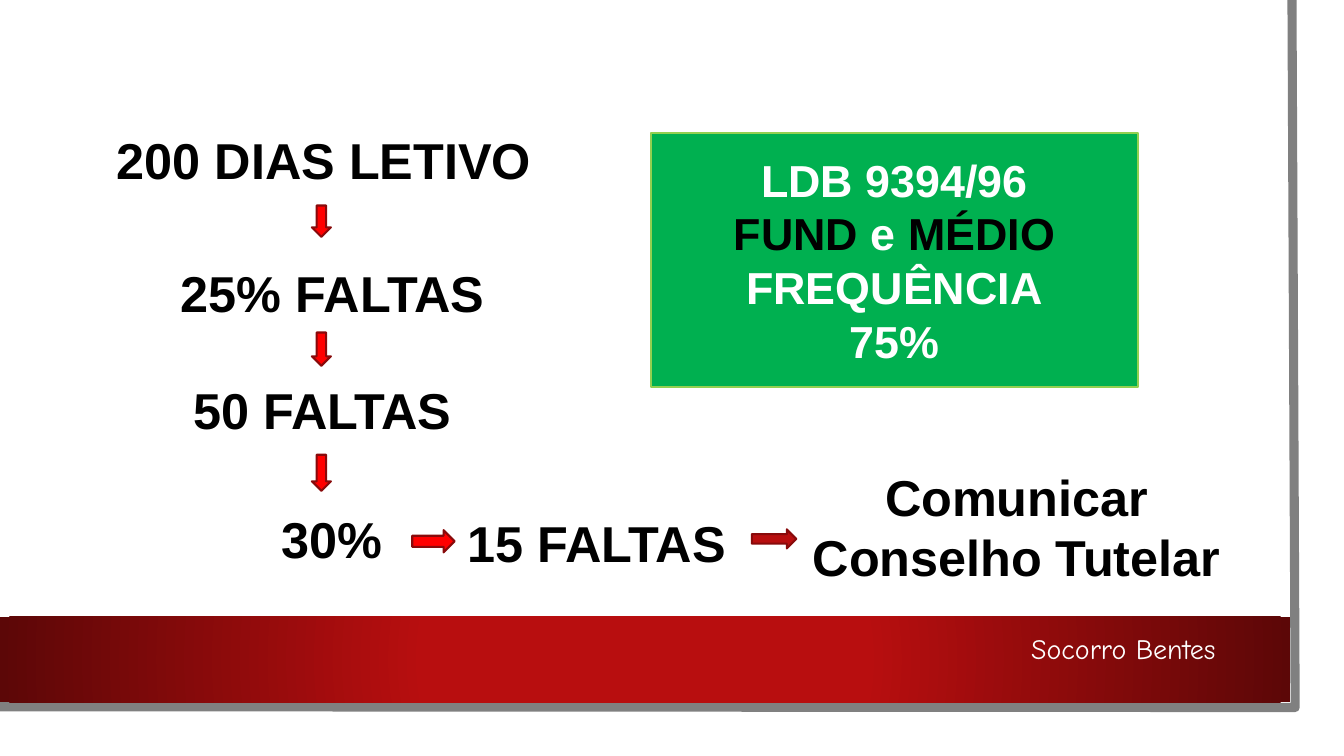
from lxml.etree import SubElement
from pptx import Presentation
from pptx.dml.color import RGBColor
from pptx.enum.shapes import MSO_SHAPE as Shape
from pptx.enum.text import MSO_ANCHOR as Anchor, MSO_AUTO_SIZE as Fit, PP_ALIGN as Align
from pptx.oxml.ns import qn
from pptx.util import Cm, Pt

RED, DARK, EDGE = "B80E0F", "5C0707", "880A0B"
BRIGHT, BLACK, WHITE = "FF0000", "000000", "FFFFFF"


def color(code):
    return RGBColor.from_string(code)


def add_box(slide, kind, left, top, width, height, fill, line=None):
    box = slide.shapes.add_shape(kind, Cm(left), Cm(top), Cm(width), Cm(height))
    box.shadow.inherit = False
    box.fill.solid()
    box.fill.fore_color.rgb = color(fill)
    if line:
        box.line.color.rgb = color(line)
        box.line.width = Pt(1.5)
    else:
        box.line.fill.background()
    return box


def write(par, text, size=36, font="Arial", ink=BLACK, bold=True, align=Align.CENTER):
    par.alignment = align
    run = par.add_run()
    run.text = text
    run.font.size = Pt(size)
    run.font.name = font
    run.font.bold = bold
    run.font.color.rgb = color(ink)


def add_label(slide, text, left, top, width, height, **style):
    frame = slide.shapes.add_textbox(Cm(left), Cm(top), Cm(width), Cm(height)).text_frame
    frame.word_wrap = True
    frame.auto_size = Fit.SHAPE_TO_FIT_TEXT
    write(frame.paragraphs[0], text, **style)


def add_frame(slide):
    """Draw the white page, its grey right and bottom edge, and the red band."""
    add_box(slide, Shape.RECTANGLE, 0, 0, 33.27, 18.47, WHITE)

    pen = slide.shapes.build_freeform(Cm(32.56), Cm(0))
    pen.add_line_segments([(Cm(32.64), Cm(17.83)), (Cm(-0.08), Cm(17.81))], close=False)
    edge = pen.convert_to_shape()
    edge.shadow.inherit = False
    edge.fill.background()
    edge.line.color.rgb = color("808080")
    edge.line.width = Pt(6.5)

    band = add_box(slide, Shape.RECTANGLE, 0, 15.54, 32.51, 2.16, RED)
    band.fill.gradient()
    for stop, code, place in zip(band.fill.gradient_stops, (RED, DARK), (0.34, 1)):
        stop.color.rgb = color(code)
        stop.position = place
    grad = band.element.spPr.find(qn("a:gradFill"))
    grad.remove(grad.find(qn("a:lin")))
    round_fill = SubElement(grad, qn("a:path"), {"path": "circle"})
    SubElement(round_fill, qn("a:fillToRect"), dict.fromkeys("ltrb", "50000"))


def add_law(slide):
    box = add_box(slide, Shape.RECTANGLE, 16.41, 3.35, 12.27, 6.4, "00B050", "92D050")
    frame = box.text_frame
    frame.word_wrap = True
    frame.vertical_anchor = Anchor.MIDDLE
    lines = [
        [("LDB 9394/96", WHITE)],
        [("FUND", BLACK), (" e ", WHITE), ("MÉDIO", BLACK)],
        [("FREQUÊNCIA", WHITE)],
        [("75%", WHITE)],
    ]
    for i, line in enumerate(lines):
        par = frame.add_paragraph() if i else frame.paragraphs[0]
        for text, ink in line:
            write(par, text, size=32, ink=ink)


def main():
    deck = Presentation()
    deck.slide_width, deck.slide_height = Cm(33.87), Cm(19.05)
    slide = deck.slides.add_slide(deck.slide_layouts[6])
    add_frame(slide)

    for text, left, top, width, height in [
        ("200 DIAS LETIVO", 2.54, 3.12, 11.25, 1.8),
        ("25% FALTAS", 2.74, 6.48, 11.28, 1.8),
        ("50 FALTAS", 2.46, 9.42, 11.33, 1.8),
        ("30%", 2.74, 12.67, 11.23, 1.8),
        ("15 FALTAS", 10.9, 12.78, 8.28, 1.8),
        ("Comunicar Conselho Tutelar", 20.02, 11.61, 11.2, 3.33),
    ]:
        add_label(slide, text, left, top, width, height)
    add_label(slide, "Socorro Bentes", 20.37, 15.8, 10.52, 1.12, size=20,
              font="Comic Neue", ink=WHITE, bold=False, align=Align.RIGHT)

    add_law(slide)

    for top, height in [(5.18, 0.79), (8.38, 0.84), (11.46, 0.91)]:
        add_box(slide, Shape.DOWN_ARROW, 7.86, top, 0.48, height, BRIGHT, EDGE)
    add_box(slide, Shape.RIGHT_ARROW, 10.39, 13.36, 1.07, 0.56, BRIGHT, EDGE)
    add_box(slide, Shape.RIGHT_ARROW, 18.95, 13.34, 1.12, 0.48, RED, EDGE)

    deck.save("out.pptx")


if __name__ == "__main__":
    main()
